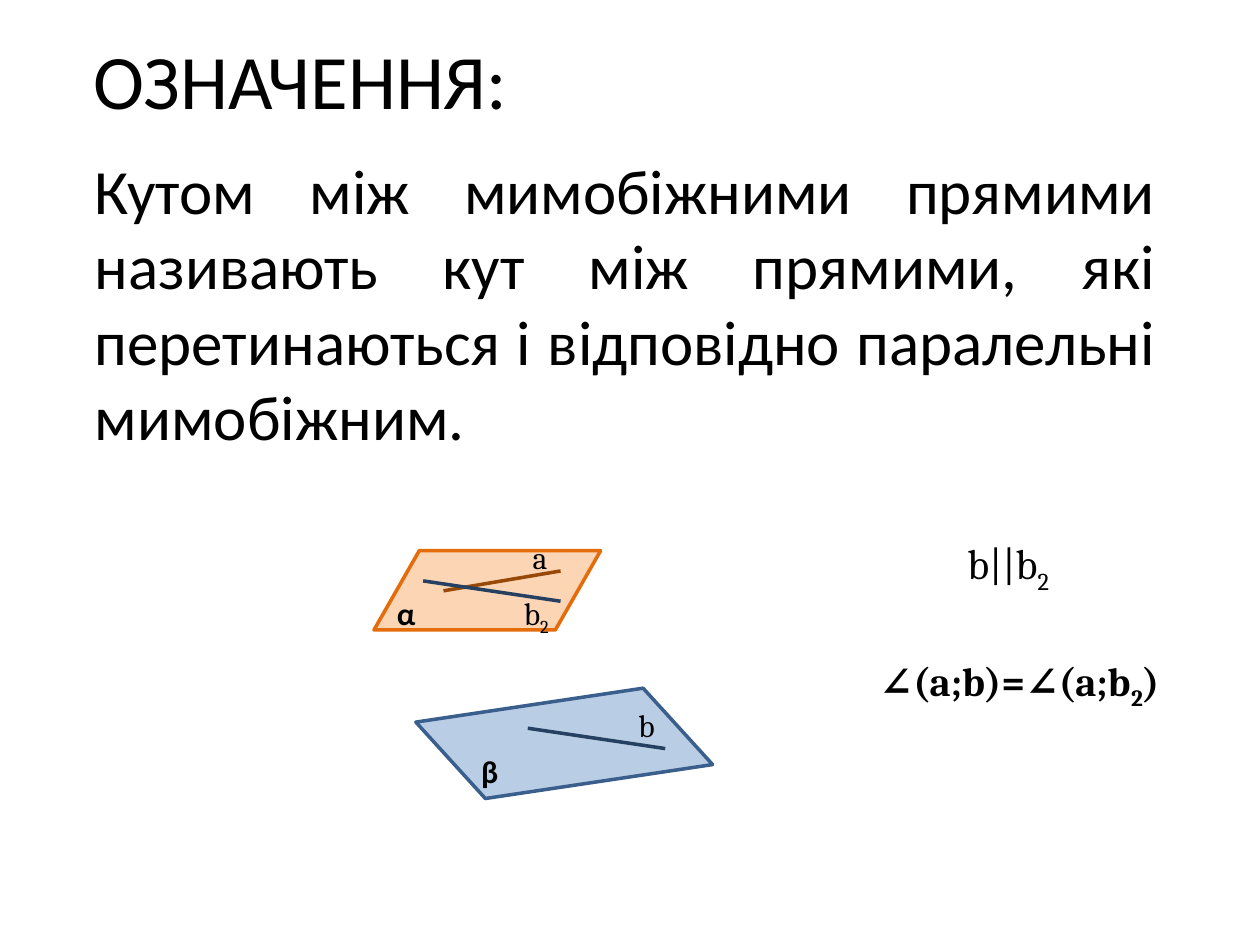
import pptx
import pptx.util
import pptx.dml.color
import pptx.enum.shapes
import pptx.enum.text
import pptx.oxml
import pptx.oxml.ns

Cm = pptx.util.Cm
Pt = pptx.util.Pt
TEXT = pptx.enum.text

COLORS = {
    "text": "000000",
    "alpha_fill": "FCD5B5",
    "alpha_edge": "E46C0A",
    "line_a": "984807",
    "beta_fill": "B9CDE5",
    "beta_edge": "3A5F8C",
    "line_b": "254061",
}

TITLE = "ОЗНАЧЕННЯ:"
DEFINITION = (
    "Кутом між мимобіжними прямими називають кут між прямими, які "
    "перетинаються і відповідно паралельні мимобіжним."
)

PLANES = [
    ((7.54, 11.1, 4.57, 1.6), "alpha_fill", "alpha_edge", 0, False),
    ((8.48, 14.12, 5.79, 1.73), "beta_fill", "beta_edge", 351.5, True),
]
LINES = [
    ((8.94, 11.91), (11.3, 11.51), "line_a"),
    ((10.64, 14.68), (13.41, 15.09), "line_b"),
    ((8.53, 11.71), (11.3, 12.12), "line_b"),
]
# Text between underscores is set as a subscript.
LABELS = [
    ("α", (7.75, 11.86, 0.91, 1.02), {"font": "Calibri", "bold": True}),
    ("a", (10.49, 10.72, 0.81, 1.02), {}),
    ("β", (9.45, 15.04, 0.86, 1.02), {"font": "Calibri", "bold": True}),
    ("b", (12.62, 14.1, 0.86, 1.02), {}),
    ("b_2_", (10.31, 11.86, 1.09, 1.02), {}),
    ("∠(a;b)=∠(a;b_2_)", (17.48, 13.11, 6.22, 1.24), {"size": 23, "bold": True}),
    ("b||b_2_", (19.25, 10.72, 2.77, 1.27), {"size": 24, "wrap": True}),
]


def color(name):
    return pptx.dml.color.RGBColor.from_string(COLORS[name])


def write(box, text, font="Cambria", size=18, bold=False, wrap=False,
          align=TEXT.PP_ALIGN.LEFT, before=0, fit=TEXT.MSO_AUTO_SIZE.SHAPE_TO_FIT_TEXT):
    frame = box.text_frame
    frame.word_wrap = wrap
    frame.auto_size = fit
    para = frame.paragraphs[0]
    para.alignment = align
    para.space_before = Pt(before)
    for index, piece in enumerate(text.split("_")):
        if not piece:
            continue
        span = para.add_run()
        span.text = piece
        span.font.name = font
        span.font.size = Pt(size)
        span.font.bold = bold
        span.font.color.rgb = color("text")
        if index % 2:
            span.font._element.set("baseline", "-25000")


def place(box, left, top, width, height):
    box.left, box.top, box.width, box.height = map(Cm, (left, top, width, height))


def add_plane(page, area, fill, edge, rotation, flipped):
    plane = page.shapes.add_shape(
        pptx.enum.shapes.MSO_SHAPE.FLOWCHART_DATA, *map(Cm, area))
    plane.shadow.inherit = False
    plane.fill.solid()
    plane.fill.fore_color.rgb = color(fill)
    plane.line.color.rgb = color(edge)
    plane.line.width = Pt(2)
    plane.rotation = rotation
    if flipped:
        plane._element.spPr.xfrm.set("flipV", "1")


def add_line(page, start, end, name):
    line = page.shapes.add_connector(
        pptx.enum.shapes.MSO_CONNECTOR.STRAIGHT, *map(Cm, start + end))
    line.line.color.rgb = color(name)
    line.line.width = Pt(2)
    line._element.spPr.append(
        pptx.oxml.parse_xml("<a:effectLst %s/>" % pptx.oxml.ns.nsdecls("a")))


def main():
    deck = pptx.Presentation()
    deck.slide_width, deck.slide_height = Cm(25.4), Cm(19.05)
    page = deck.slides.add_slide(deck.slide_layouts[5])

    title = page.shapes.title
    place(title, 1.63, 0, 22.86, 3.18)
    title.text_frame.vertical_anchor = TEXT.MSO_ANCHOR.MIDDLE
    write(title, TITLE, font="Calibri", size=44, wrap=True,
          fit=TEXT.MSO_AUTO_SIZE.NONE)

    body = page.shapes.add_textbox(*map(Cm, (0.69, 2.92, 22.86, 6.2)))
    body.text_frame.margin_left = Cm(1.22)
    write(body, DEFINITION, font="Calibri", size=36, wrap=True, before=7.2,
          align=TEXT.PP_ALIGN.JUSTIFY, fit=TEXT.MSO_AUTO_SIZE.NONE)

    for plane in PLANES:
        add_plane(page, *plane)
    for line in LINES:
        add_line(page, *line)
    for text, area, style in LABELS:
        write(page.shapes.add_textbox(*map(Cm, area)), text, **style)

    deck.save("out.pptx")


if __name__ == "__main__":
    main()
